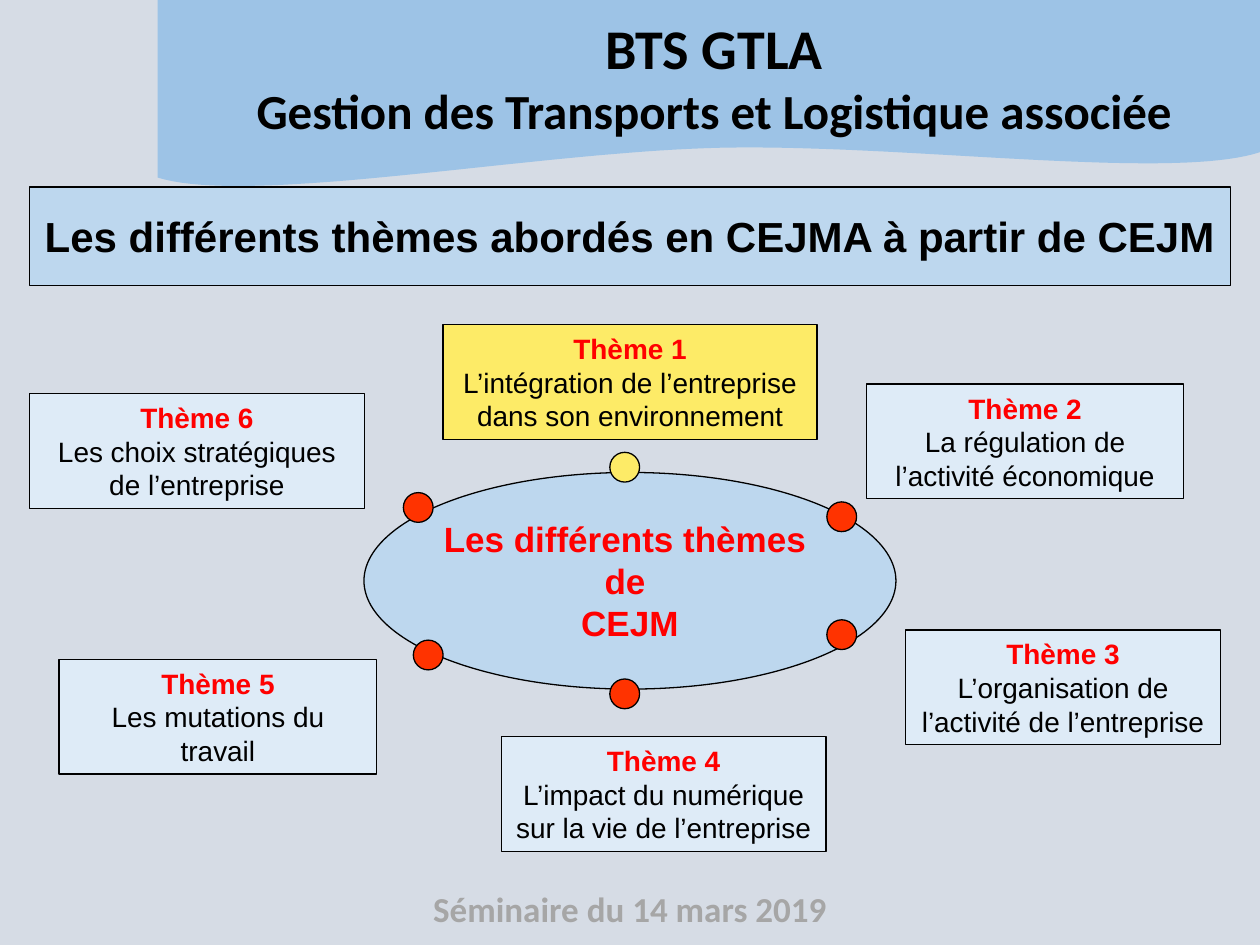
from pptx import Presentation
from pptx.dml.color import RGBColor
from pptx.enum import shapes as kinds, text as txt
from pptx.util import Pt

BACKGROUND = RGBColor(0xD6, 0xDC, 0xE5)
WAVE_BLUE = RGBColor(0x9D, 0xC3, 0xE6)
PANEL_BLUE = RGBColor(0xBD, 0xD7, 0xEE)
PALE_BLUE = RGBColor(0xDE, 0xEB, 0xF7)
YELLOW = RGBColor(0xFD, 0xEB, 0x67)
ORANGE = RGBColor(0xFF, 0x33, 0x00)
RED = RGBColor(0xFF, 0x00, 0x00)
BLACK = RGBColor(0x00, 0x00, 0x00)
GREY = RGBColor(0xA6, 0xA6, 0xA6)

RECTANGLE = kinds.MSO_SHAPE.RECTANGLE
OVAL = kinds.MSO_SHAPE.OVAL
DOT_SIZE = 17
CARD_HEIGHT = 65.5

# number, wording, card left, card top, card width, dot left, dot top, card fill, dot fill
THEMES = [
    (4, "L’impact du numérique sur la vie de l’entreprise",
     286.5, 421, 185.5, 348.5, 388, PALE_BLUE, ORANGE),
    (1, "L’intégration de l’entreprise dans son environnement",
     253.2, 185.5, 213.8, 348.5, 258.5, YELLOW, YELLOW),
    (2, "La régulation de l’activité économique",
     495, 219.5, 181.5, 472.5, 286.8, PALE_BLUE, ORANGE),
    (5, "Les mutations du travail",
     33.8, 376.8, 181.5, 236.2, 365.8, PALE_BLUE, ORANGE),
    (3, "L’organisation de l’activité de l’entreprise",
     517.5, 360, 180, 472.5, 354.2, PALE_BLUE, ORANGE),
    (6, "Les choix stratégiques de l’entreprise\u00a0".rstrip(),
     16.8, 225, 191.5, 230.5, 281.5, PALE_BLUE, ORANGE),
]


def add_line(frame, wording, *, size, font="Arial", color=BLACK, bold=True):
    """Add a centred paragraph, using the frame's first one while it is empty."""
    first = frame.paragraphs[0]
    paragraph = frame.add_paragraph() if first.runs else first
    paragraph.alignment = txt.PP_ALIGN.CENTER
    run = paragraph.add_run()
    run.text = wording
    run.font.size = Pt(size)
    run.font.name = font
    run.font.bold = bold
    run.font.color.rgb = color


def add_outlined(parent, kind, left, top, width, height, fill, wrap=True):
    shape = parent.shapes.add_shape(kind, Pt(left), Pt(top), Pt(width), Pt(height))
    shape.shadow.inherit = False
    shape.fill.solid()
    shape.fill.fore_color.rgb = fill
    shape.line.color.rgb = BLACK
    shape.line.width = Pt(0.75)
    shape.text_frame.word_wrap = wrap
    shape.text_frame.vertical_anchor = txt.MSO_ANCHOR.MIDDLE
    return shape


def add_text_box(slide, left, top, width, height):
    frame = slide.shapes.add_textbox(Pt(left), Pt(top), Pt(width), Pt(height)).text_frame
    frame.word_wrap = True
    return frame


def curve(start, control1, control2, end, steps=40):
    """Return points along a cubic Bézier curve, without its start."""
    points = []
    for step in range(1, steps + 1):
        t = step / steps
        weights = ((1 - t) ** 3, 3 * t * (1 - t) ** 2, 3 * t ** 2 * (1 - t), t ** 3)
        points.append(tuple(
            sum(w * value for w, value in zip(weights, values))
            for values in zip(start, control1, control2, end)))
    return points


def add_header(slide, left, top, width):
    right = left + width
    edge, crest, foot = (right, top + 87), (left + 320.4, top + 84.5), (left, top + 101.5)
    outline = [(right, top), edge]
    outline += curve(edge, (left + 579, top + 103.7), (left + 425.5, top + 82), crest)
    outline += curve(crest, (left + 215.3, top + 87), (left + 53.3, top + 118), foot)
    builder = slide.shapes.build_freeform(Pt(left), Pt(top))
    builder.add_line_segments([(Pt(x), Pt(y)) for x, y in outline], close=True)
    wave = builder.convert_to_shape()
    wave.shadow.inherit = False
    wave.fill.solid()
    wave.fill.fore_color.rgb = WAVE_BLUE
    wave.line.fill.background()

    frame = add_text_box(slide, left + 45, top + 4.3, 546, 80)
    add_line(frame, "BTS GTLA", size=32, font="Calibri")
    add_line(frame, "Gestion des Transports et Logistique associée", size=28, font="Calibri")


def add_footer(slide, left, top, width, height):
    frame = add_text_box(slide, left, top, width, height)
    add_line(frame, "Séminaire du 14 mars 2019", size=20, font="Calibri", color=GREY)


def add_hub(slide, left, top, width, height):
    hub = add_outlined(slide, OVAL, left, top, width, height, PANEL_BLUE, wrap=False)
    for wording in ("Les différents thèmes ", "de ", "CEJM"):
        add_line(hub.text_frame, wording, size=20, color=RED)


def add_theme(slide, number, wording, left, top, width, dot_left, dot_top, fill, dot_fill):
    group = slide.shapes.add_group_shape()
    add_outlined(group, OVAL, dot_left, dot_top, DOT_SIZE, DOT_SIZE, dot_fill)
    card = add_outlined(group, RECTANGLE, left, top, width, CARD_HEIGHT, fill)
    add_line(card.text_frame, f"Thème {number}", size=16, color=RED)
    add_line(card.text_frame, wording, size=16, bold=False)


def add_title(slide, left, top, width, height):
    title = add_outlined(slide, RECTANGLE, left, top, width, height, PANEL_BLUE, wrap=False)
    add_line(title.text_frame, "Les différents thèmes abordés en CEJMA à partir de CEJM", size=24)


def main():
    deck = Presentation()
    deck.slide_width, deck.slide_height = Pt(720), Pt(540)
    slide = deck.slides.add_slide(deck.slide_layouts[6])
    slide.background.fill.solid()
    slide.background.fill.fore_color.rgb = BACKGROUND

    add_footer(slide, 180, 503.5, 360, 31.5)
    add_header(slide, 90, 0, 630)
    add_hub(slide, 208, 270, 304, 123.8)
    for theme in THEMES:
        add_theme(slide, *theme)
    add_title(slide, 16.8, 106.8, 686.2, 56.2)
    deck.save("out.pptx")


if __name__ == "__main__":
    main()
